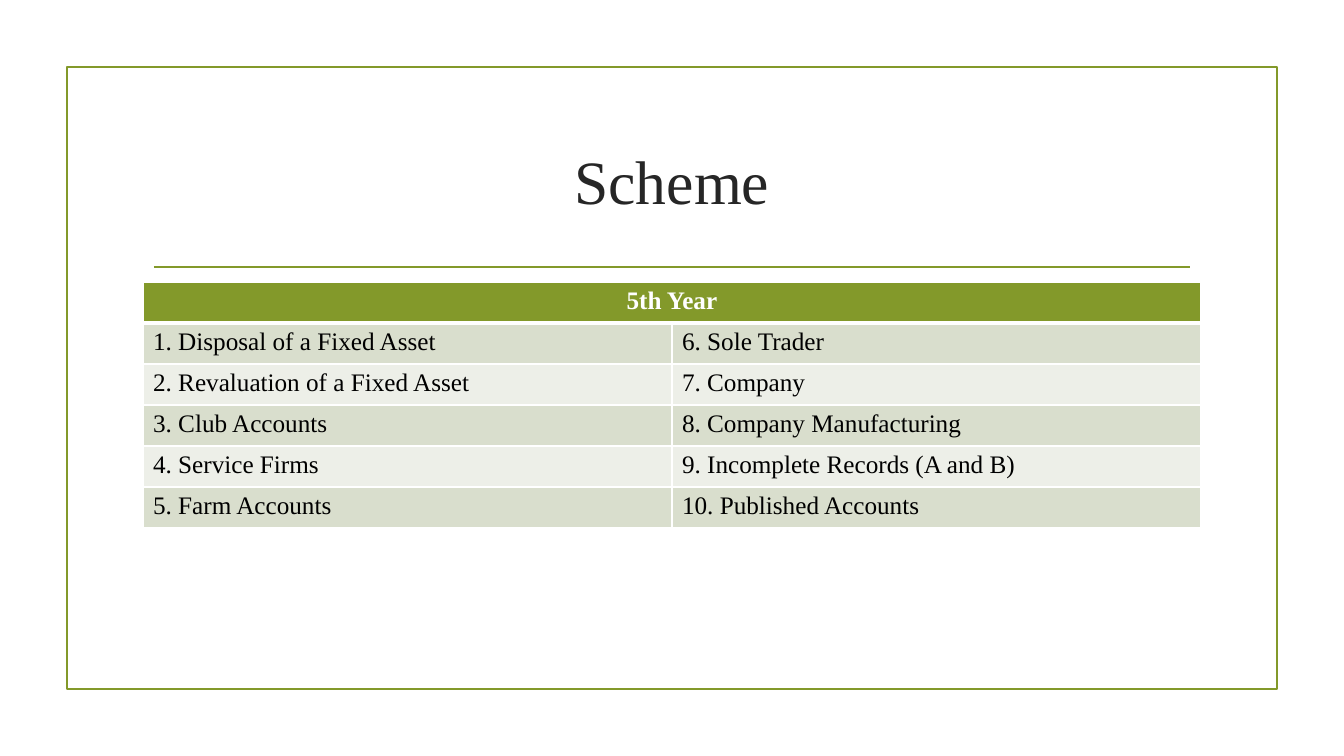
import pptx
import pptx.util
import pptx.dml.color
import pptx.enum.shapes
import pptx.enum.text
import pptx.oxml.ns
import lxml.etree

SCALE = 914400 / 100.8  # EMU per px
FONT = "Times New Roman"
GREEN = "83992A"
WHITE = "FFFFFF"
BANDS = ["D9DECD", "EDEFE8"]
TOPICS = [
    ("1. Disposal of a Fixed Asset", "6. Sole Trader"),
    ("2. Revaluation of a Fixed Asset", "7. Company"),
    ("3. Club Accounts", "8. Company Manufacturing"),
    ("4. Service Firms", "9. Incomplete Records (A and B)"),
    ("5. Farm Accounts", "10. Published Accounts"),
]


def px(*lengths):
    return [pptx.util.Emu(round(length * SCALE)) for length in lengths]


def color(value):
    return pptx.dml.color.RGBColor.from_string(value)


deck = pptx.Presentation()
deck.slide_width, deck.slide_height = px(1344, 756)
page = deck.slides.add_slide(deck.slide_layouts[5])

# Frame
frame = page.shapes.add_shape(
    pptx.enum.shapes.MSO_SHAPE.RECTANGLE, *px(67, 67, 1210, 622))
frame.shadow.inherit = False
frame.fill.background()

# Rule under the title
rule = page.shapes.add_connector(
    pptx.enum.shapes.MSO_CONNECTOR.STRAIGHT, *px(154, 267, 1190, 267))
lxml.etree.SubElement(rule._element.spPr, pptx.oxml.ns.qn("a:effectLst"))
for outline in (frame.line, rule.line):
    outline.color.rgb = color(GREEN)
    outline.width = pptx.util.Pt(1.25)

# Title
title = page.shapes.title
title.left, title.top, title.width, title.height = px(143, 108, 1058, 144)
title.text_frame.text = "Scheme"
title.text_frame.vertical_anchor = pptx.enum.text.MSO_ANCHOR.MIDDLE
para = title.text_frame.paragraphs[0]
para.alignment = pptx.enum.text.PP_ALIGN.CENTER
span = para.runs[0]
span.font.name = FONT
span.font.size = pptx.util.Pt(44)
span.font.color.rgb = color("262626")

# Table of topics
rows = [("5th Year", "")] + TOPICS
table = page.shapes.add_table(len(rows), 2, *px(143, 282, 1058, 246)).table
table.cell(0, 0).merge(table.cell(0, 1))
for row_index, texts in enumerate(rows):
    header = row_index == 0
    for column_index, text in enumerate(texts):
        cell = table.cell(row_index, column_index)
        cell.fill.solid()
        cell.fill.fore_color.rgb = color(
            GREEN if header else BANDS[(row_index - 1) % 2])

        # White borders, thicker below the header
        thick_side = {0: "lnB", 1: "lnT"}.get(row_index)
        properties = cell._tc.get_or_add_tcPr()
        for position, side in enumerate(("lnL", "lnR", "lnT", "lnB")):
            width = pptx.util.Pt(3 if side == thick_side else 1)
            border = lxml.etree.Element(
                pptx.oxml.ns.qn("a:" + side), w=str(width))
            fill = lxml.etree.SubElement(
                border, pptx.oxml.ns.qn("a:solidFill"))
            lxml.etree.SubElement(
                fill, pptx.oxml.ns.qn("a:srgbClr"), val=WHITE)
            properties.insert(position, border)

        if not text:
            continue
        cell.text_frame.text = text
        para = cell.text_frame.paragraphs[0]
        if header:
            para.alignment = pptx.enum.text.PP_ALIGN.CENTER
        span = para.runs[0]
        span.font.name = FONT
        span.font.size = pptx.util.Pt(18)
        span.font.bold = header
        span.font.color.rgb = color(WHITE if header else "000000")

deck.save("out.pptx")
